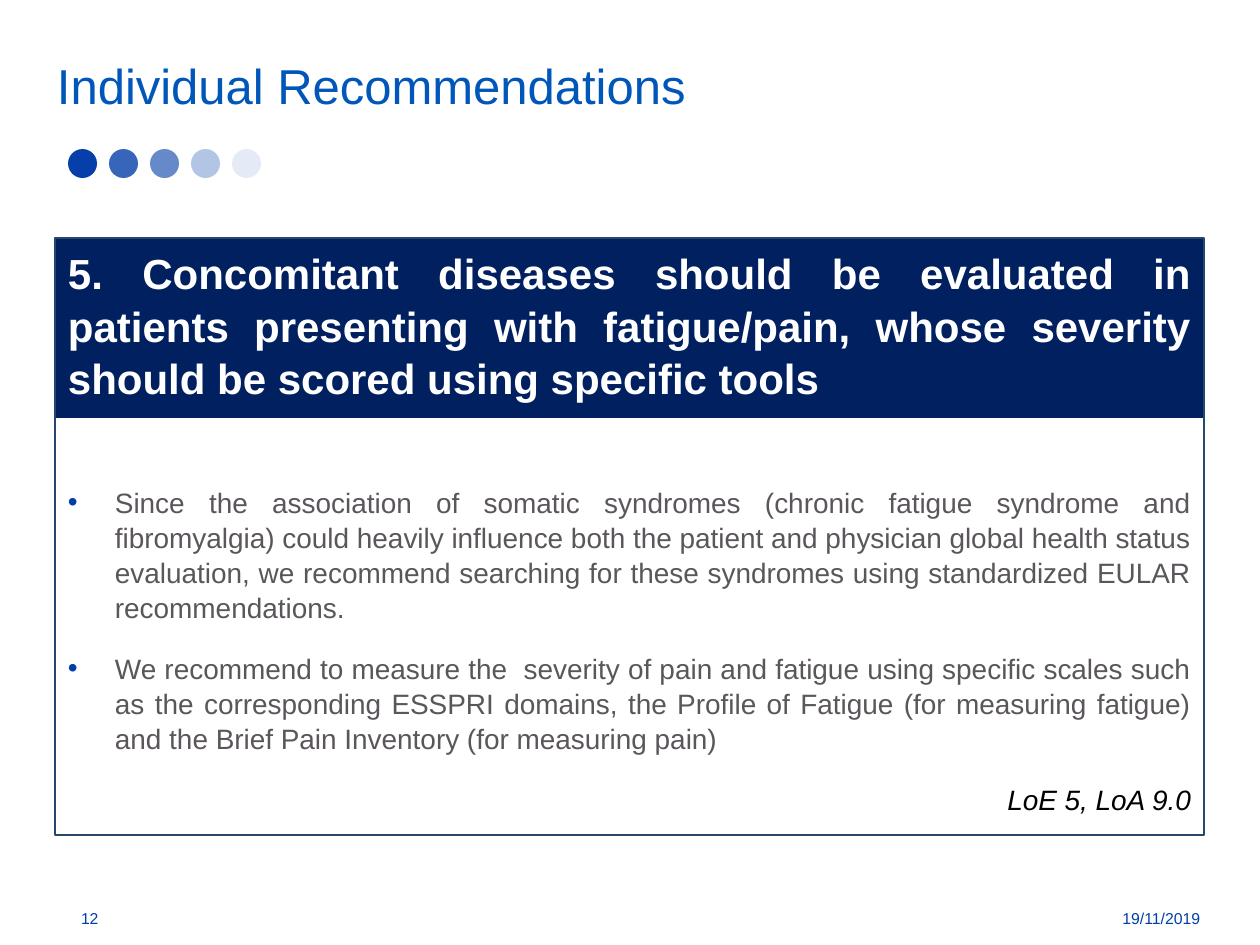
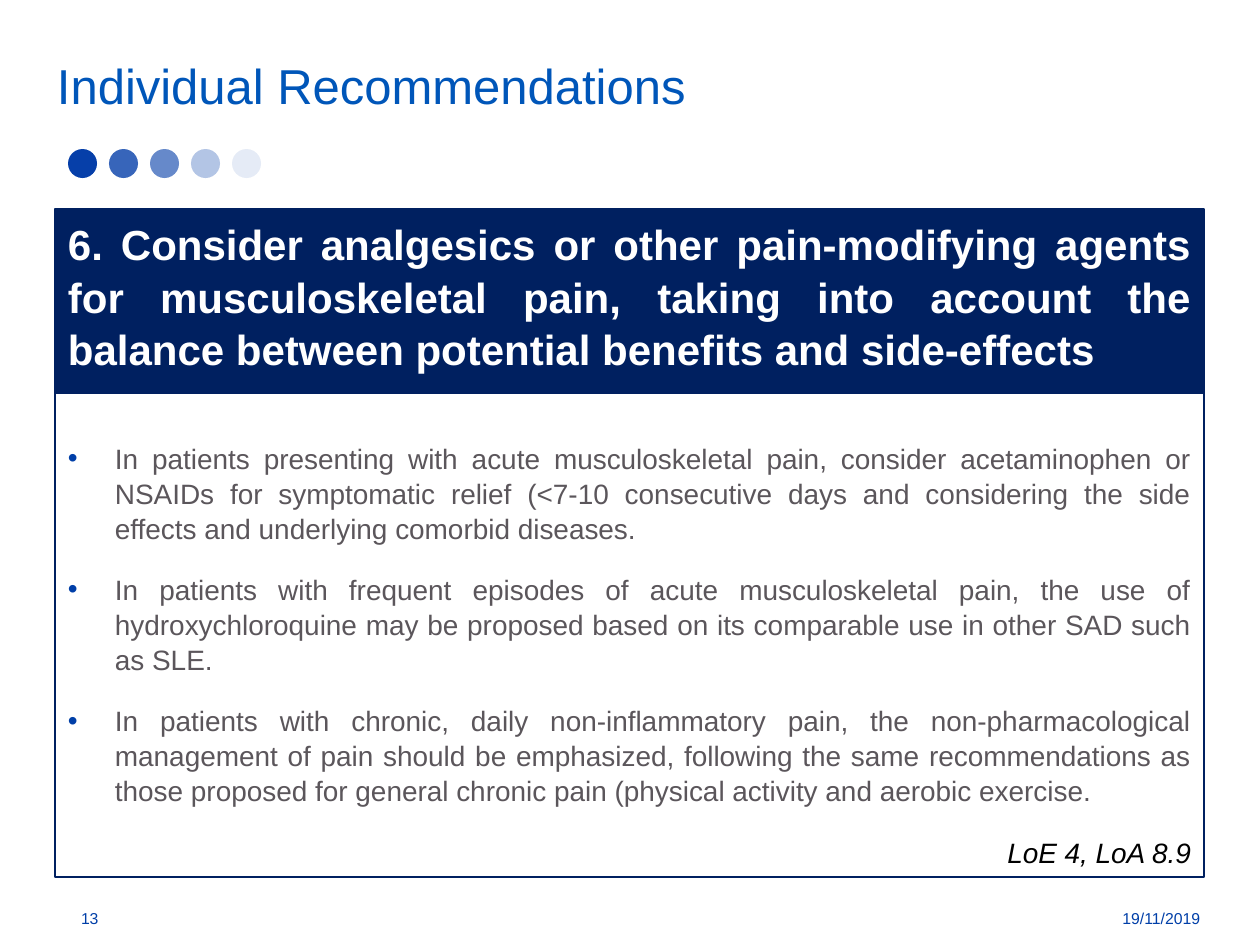
"""Build two slides of individual clinical recommendations."""
from lxml.etree import SubElement
from pptx import Presentation
from pptx.dml.color import RGBColor
from pptx.enum.shapes import MSO_SHAPE as Shape
from pptx.enum.text import MSO_ANCHOR as Anchor, MSO_AUTO_SIZE as AutoSize, PP_ALIGN as Align
from pptx.oxml.ns import qn
from pptx.util import Pt

NAVY, BLUE, TITLE_BLUE, DOT_BLUE = "002060", "003FA8", "0056B9", "063FA9"
WHITE, GREY, BLACK = "FFFFFF", "5B565B", "000000"
DOT_OPACITIES = [100, 80, 61, 30, 10]
LEFT, WIDTH, INSET, INDENT = 55, 1149, 13, 47
TITLE = "Individual Recommendations"
DATE = "19/11/2019"
colour = RGBColor.from_string


def px(*lengths):
    """Turn pixels at 126 to the inch into a list of EMU."""
    return [round(length * 914400 / 126) for length in lengths]


def write(shape, text, size, hue, align=Align.LEFT, anchor=Anchor.TOP, top=6,
          bold=False, italic=False, bullet=False, spacing=1.0, before=0, after=0):
    """Add one formatted paragraph to a shape."""
    frame = shape.text_frame
    first = not frame.text
    if first:
        frame.word_wrap = True
        frame.auto_size = AutoSize.NONE
        frame.vertical_anchor = anchor
        frame.margin_left, frame.margin_top, frame.margin_right, frame.margin_bottom = px(INSET, top, INSET, 6)
    paragraph = frame.paragraphs[0] if first else frame.add_paragraph()
    if bullet:
        properties = paragraph._p.get_or_add_pPr()
        indent = px(INDENT)[0]
        properties.set("marL", str(indent))
        properties.set("indent", str(-indent))
        bullet_colour = SubElement(properties, qn("a:buClr"))
        SubElement(bullet_colour, qn("a:srgbClr"), val=BLUE)
        SubElement(properties, qn("a:buFont"), typeface="Arial")
        SubElement(properties, qn("a:buChar"), char="•")
    paragraph.alignment = align
    paragraph.line_spacing = spacing
    paragraph.space_before = Pt(0 if first else before)
    paragraph.space_after = Pt(after)
    run = paragraph.add_run()
    run.text = text
    font = run.font
    font.name, font.size, font.bold, font.italic = "Arial", Pt(size), bold, italic
    font.color.rgb = colour(hue)


recommendations = [
    {
        "number": 12, "top": 238, "band": 180, "height": 597, "body": 246, "line": "28476D",
        "heading": "5. Concomitant diseases should be evaluated in patients presenting with "
                   "fatigue/pain, whose severity should be scored using specific tools",
        "points": [
            "Since the association of somatic syndromes (chronic fatigue syndrome and fibromyalgia) "
            "could heavily influence both the patient and physician global health status evaluation, "
            "we recommend searching for these syndromes using standardized EULAR recommendations.",
            "We recommend to measure the  severity of pain and fatigue using specific scales such as "
            "the corresponding ESSPRI domains, the Profile of Fatigue (for measuring fatigue) and the "
            "Brief Pain Inventory (for measuring pain)",
        ],
        "evidence": "LoE 5, LoA 9.0",
    },
    {
        "number": 13, "top": 209, "band": 185, "height": 668, "body": 231, "line": NAVY,
        "heading": "6. Consider analgesics or other pain-modifying agents for musculoskeletal pain, "
                   "taking into account the balance between potential benefits and side-effects",
        "points": [
            "In patients presenting with acute musculoskeletal pain, consider acetaminophen or NSAIDs "
            "for symptomatic relief (<7-10 consecutive days and considering the side effects and "
            "underlying comorbid diseases.",
            "In patients with frequent episodes of acute musculoskeletal pain, the use of "
            "hydroxychloroquine may be proposed based on its comparable use in other SAD such as SLE.",
            "In patients with chronic, daily non-inflammatory pain, the non-pharmacological management "
            "of pain should be emphasized, following the same recommendations as those proposed for "
            "general chronic pain (physical activity and aerobic exercise.",
        ],
        "evidence": "LoE 4, LoA 8.9",
    },
]

presentation = Presentation()
presentation.slide_width, presentation.slide_height = px(1260, 945)

for item in recommendations:
    slide = presentation.slides.add_slide(presentation.slide_layouts[5])
    shapes = slide.shapes

    title = shapes.title
    title.left, title.top, title.width, title.height = px(44, 45, WIDTH, 87)
    write(title, TITLE, 28, TITLE_BLUE, top=10)

    for index, opacity in enumerate(DOT_OPACITIES):
        dot = shapes.add_shape(Shape.OVAL, *px(68 + 41 * index, 149, 29, 29))
        dot.shadow.inherit = False
        dot.fill.solid()
        dot.fill.fore_color.rgb = colour(DOT_BLUE)
        dot.line.fill.background()
        dot_colour = dot._element.spPr.find(".//" + qn("a:srgbClr"))
        SubElement(dot_colour, qn("a:alpha"), val=str(opacity * 1000))

    band = shapes.add_shape(Shape.RECTANGLE, *px(LEFT, item["top"], WIDTH, item["band"]))
    band.shadow.inherit = False
    band.fill.solid()
    band.fill.fore_color.rgb = colour(NAVY)
    band.line.fill.background()
    write(band, item["heading"], 24, WHITE, align=Align.JUSTIFY, bold=True, top=8, spacing=1.04)

    panel = shapes.add_shape(Shape.RECTANGLE, *px(LEFT, item["top"], WIDTH, item["height"]))
    panel.shadow.inherit = False
    panel.fill.background()
    panel.line.color.rgb = colour(item["line"])
    panel.line.width = Pt(0.75)
    body_format = {"top": item["body"], "spacing": 1.04, "before": 3.2, "after": 12}
    for point in item["points"]:
        write(panel, point, 16, GREY, align=Align.JUSTIFY, bullet=True, **body_format)
    write(panel, item["evidence"], 16, BLACK, align=Align.RIGHT, italic=True, **body_format)

    number_box = shapes.add_textbox(*px(68, 893, 121, 50))
    write(number_box, str(item["number"]), 9, BLUE, anchor=Anchor.MIDDLE)
    date_box = shapes.add_textbox(*px(1044, 893, 169, 50))
    write(date_box, DATE, 9, BLUE, align=Align.RIGHT, anchor=Anchor.MIDDLE)

presentation.save("out.pptx")
